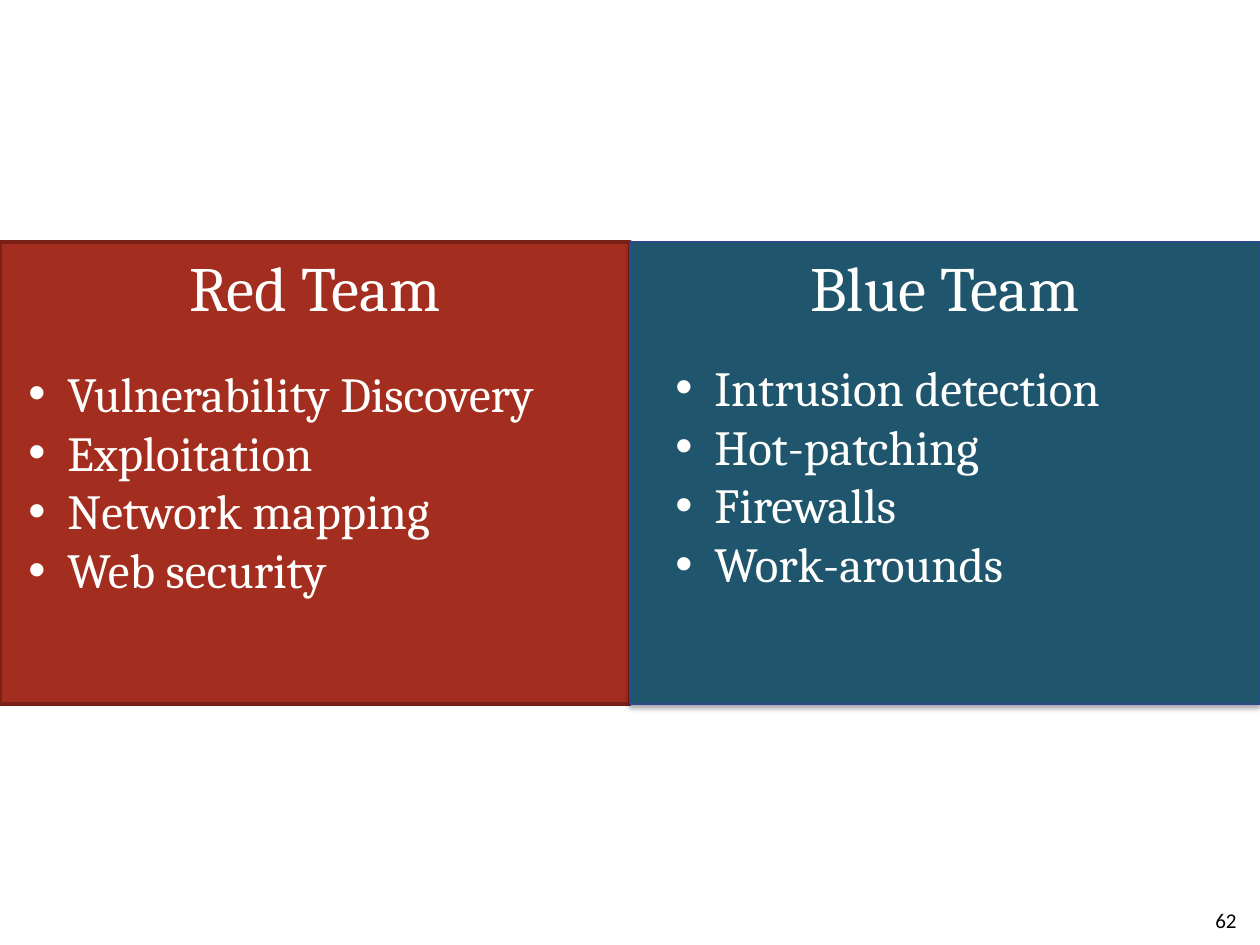
from lxml.etree import SubElement
from pptx import Presentation
from pptx.dml.color import RGBColor
from pptx.enum.shapes import MSO_SHAPE
from pptx.enum.text import MSO_ANCHOR, PP_ALIGN
from pptx.oxml.ns import qn
from pptx.util import Pt

COLORS = {
    "red": "A32D1F", "red_line": "792117",
    "blue": "1F566D", "blue_line": "2A4A8B",
    "text": "FFFFFE", "number": "000000",
}
TEAMS = [
    {
        "title": "Red Team", "fill": "red", "line": "red_line", "line_width": 2,
        "shadow": False, "list_fill": None, "list_box": (16, 357, 563, 262),
        "skills": ["Vulnerability Discovery", "Exploitation",
                   "Network mapping", "Web security"],
    },
    {
        "title": "Blue Team", "fill": "blue", "line": "blue_line", "line_width": 0.75,
        "shadow": True, "list_fill": "blue", "list_box": (663, 351, 587, 262),
        "skills": ["Intrusion detection", "Hot-patching",
                   "Firewalls", "Work-arounds"],
    },
]
PAGE_NUMBER = "62"

PX = 914400 // 126
SLIDE_WIDTH, SLIDE_HEIGHT = 1260, 945
PANEL_TOP, PANEL_HEIGHT = 242, 462
PANEL_WIDTH = SLIDE_WIDTH // len(TEAMS)
BULLET_INDENT = 39


def scaled(box):
    return [length * PX for length in box]


def color(name):
    return RGBColor.from_string(COLORS[name])


def add_run(paragraph, text, size, font, color_name):
    run = paragraph.add_run()
    run.text = text
    run.font.size = Pt(size)
    run.font.name = font
    run.font.color.rgb = color(color_name)


def add_bullet(paragraph):
    properties = paragraph._p.get_or_add_pPr()
    properties.set("marL", str(BULLET_INDENT * PX))
    properties.set("indent", str(-BULLET_INDENT * PX))
    SubElement(properties, qn("a:buFont"), typeface="Arial")
    SubElement(properties, qn("a:buChar"), char="•")


def add_shadow(shape):
    effects = shape._element.spPr.find(qn("a:effectLst"))
    shadow = SubElement(effects, qn("a:outerShdw"), blurRad=str(Pt(3.1)),
                        dist=str(Pt(1.8)), dir="5400000", rotWithShape="0")
    shadow_color = SubElement(shadow, qn("a:srgbClr"), val="000000")
    SubElement(shadow_color, qn("a:alpha"), val="35000")


def add_panel(shapes, team, left):
    box = (left, PANEL_TOP, PANEL_WIDTH, PANEL_HEIGHT)
    panel = shapes.add_shape(MSO_SHAPE.RECTANGLE, *scaled(box))
    panel.shadow.inherit = False
    if team["shadow"]:
        add_shadow(panel)
    panel.fill.solid()
    panel.fill.fore_color.rgb = color(team["fill"])
    panel.line.color.rgb = color(team["line"])
    panel.line.width = Pt(team["line_width"])
    panel.text_frame.vertical_anchor = MSO_ANCHOR.TOP
    paragraph = panel.text_frame.paragraphs[0]
    paragraph.alignment = PP_ALIGN.CENTER
    add_run(paragraph, team["title"], 36, "Cambria", "text")


def add_skills(shapes, team):
    skill_list = shapes.add_textbox(*scaled(team["list_box"]))
    if team["list_fill"]:
        skill_list.fill.solid()
        skill_list.fill.fore_color.rgb = color(team["list_fill"])
    frame = skill_list.text_frame
    frame.word_wrap = True
    for index, skill in enumerate(team["skills"]):
        paragraph = frame.add_paragraph() if index else frame.paragraphs[0]
        add_bullet(paragraph)
        add_run(paragraph, skill, 28, "Cambria", "text")


def add_page_number(shapes):
    number = shapes.add_textbox(*scaled((955, 895, 294, 50)))
    number.text_frame.word_wrap = True
    number.text_frame.vertical_anchor = MSO_ANCHOR.MIDDLE
    paragraph = number.text_frame.paragraphs[0]
    paragraph.alignment = PP_ALIGN.RIGHT
    add_run(paragraph, PAGE_NUMBER, 12, "Calibri", "number")


def main():
    presentation = Presentation()
    presentation.slide_width = SLIDE_WIDTH * PX
    presentation.slide_height = SLIDE_HEIGHT * PX
    slide = presentation.slides.add_slide(presentation.slide_layouts[6])
    add_page_number(slide.shapes)
    for index, team in enumerate(TEAMS):
        group = slide.shapes.add_group_shape()
        add_panel(group.shapes, team, index * PANEL_WIDTH)
        add_skills(group.shapes, team)
    presentation.save("out.pptx")


if __name__ == "__main__":
    main()
